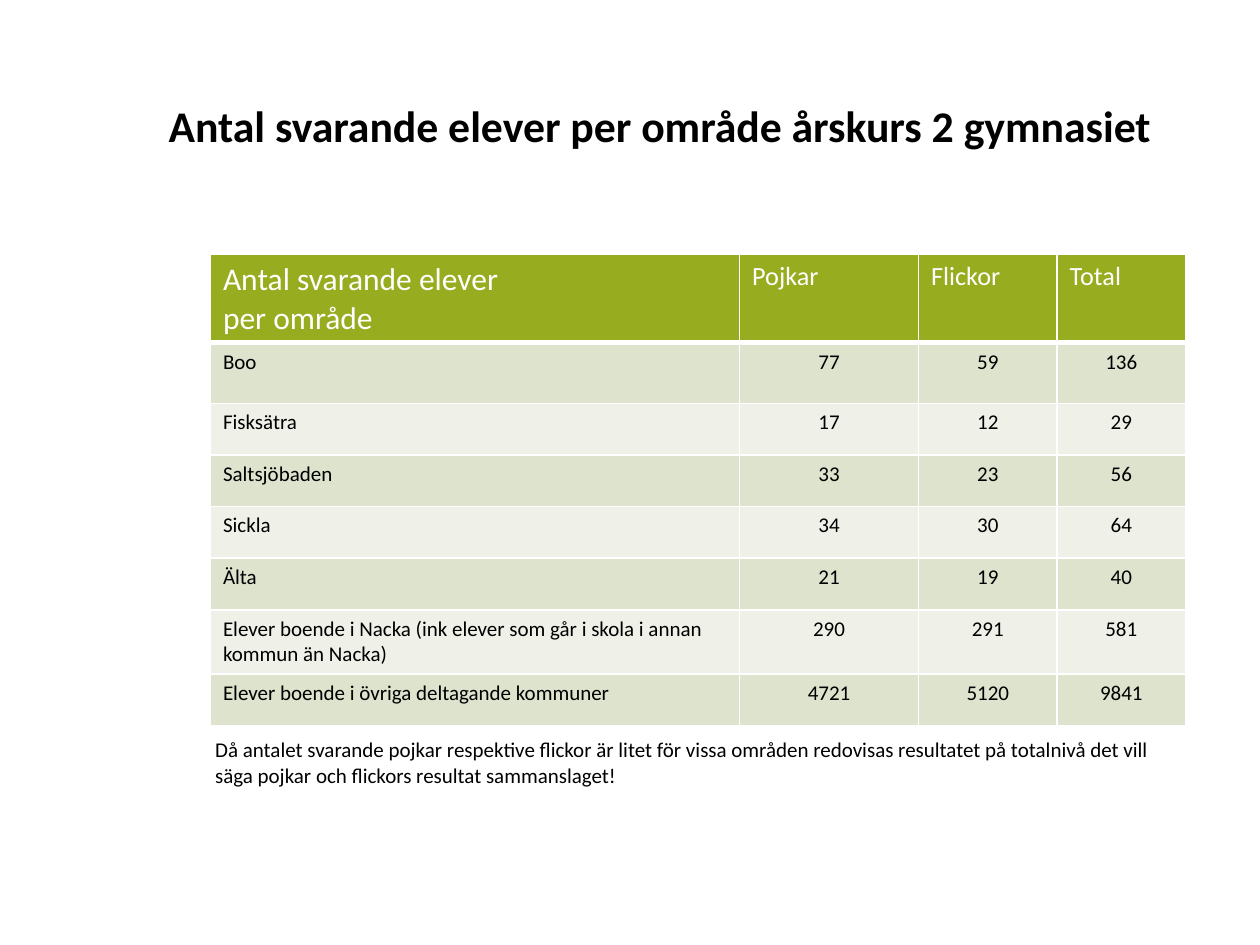
from dataclasses import dataclass
from lxml.etree import SubElement as Sub
from pptx import Presentation
from pptx.dml.color import RGBColor as RGB
from pptx.enum.text import MSO_ANCHOR as Anchor, PP_ALIGN as Align
from pptx.oxml.ns import qn
from pptx.util import Inches, Pt


@dataclass(frozen=True)
class Theme:
    font: str = "Calibri"
    ink: str = "000000"
    white: str = "FFFFFF"
    green: str = "97AC1E"
    bands: tuple = ("DDE3CD", "EFF1E8")
    title: int = 25
    lead: int = 18
    head: int = 15
    body: int = 12


LOOK = Theme()

HEADS = ("Antal svarande elever\vper område", "Pojkar", "Flickor", "Total")
ROWS = (
    ("Boo", 77, 59, 136),
    ("Fisksätra", 17, 12, 29),
    ("Saltsjöbaden", 33, 23, 56),
    ("Sickla", 34, 30, 64),
    ("Älta", 21, 19, 40),
    ("Elever boende i Nacka (ink elever som går i skola i annan kommun än Nacka)",
     290, 291, 581),
    ("Elever boende i övriga deltagande kommuner", 4721, 5120, 9841),
)
WIDTHS = (4.2, 1.42, 1.1, 1.02)
HEIGHTS = (0.7, 0.48, 0.41, 0.41, 0.41, 0.41, 0.51, 0.41)
NOTE = ("Då antalet svarande pojkar respektive flickor är litet för vissa områden "
        "redovisas resultatet på totalnivå det vill säga pojkar och flickors "
        "resultat sammanslaget!")


def write(frame, text, size, color, bold=False, align=Align.LEFT):
    para = frame.paragraphs[0]
    para.text = text
    para.alignment = align
    for run in para.runs:
        style = {"name": LOOK.font, "size": Pt(size), "bold": bold}
        for key, value in style.items():
            setattr(run.font, key, value)
        run.font.color.rgb = RGB.from_string(color)
    return para


def add_text(slide, box, text, size, bold=False, anchor=Anchor.TOP):
    frame = slide.shapes.add_textbox(*map(Inches, box)).text_frame
    frame.word_wrap = True
    frame.vertical_anchor = anchor
    return write(frame, text, size, LOOK.ink, bold)


def edge(cell, widths):
    # Borders come before the fill in the cell properties
    props = cell._tc.get_or_add_tcPr()
    for side, width in widths.items():
        line = Sub(props, qn(f"a:ln{side}"), w=str(Pt(width)))
        fill = Sub(line, qn("a:solidFill"))
        Sub(fill, qn("a:srgbClr"), val=LOOK.white)


def add_cell(cell, text, fill, size, color, align, base):
    edge(cell, {"L": 1, "R": 1, "T": 1, "B": base})
    cell.fill.solid()
    cell.fill.fore_color.rgb = RGB.from_string(fill)
    write(cell.text_frame, text, size, color, align=align)


def add_grid(slide):
    box = (1.67, 2.02, sum(WIDTHS), sum(HEIGHTS))
    table = slide.shapes.add_table(
        len(HEIGHTS), len(WIDTHS), *map(Inches, box)).table
    for col, width in zip(table.columns, WIDTHS):
        col.width = Inches(width)
    for row, height in zip(table.rows, HEIGHTS):
        row.height = Inches(height)

    # Header row
    for c, text in enumerate(HEADS):
        size = LOOK.head if c else LOOK.lead
        add_cell(table.cell(0, c), text, LOOK.green, size,
                 LOOK.white, Align.LEFT, 3)

    # Banded rows, one per area
    for r, row in enumerate(ROWS):
        for c, value in enumerate(row):
            add_cell(table.cell(r + 1, c), str(value), LOOK.bands[r % 2],
                     LOOK.body, LOOK.ink,
                     Align.CENTER if c else Align.LEFT, 1)


def main():
    deck = Presentation()
    deck.slide_width, deck.slide_height = Inches(10), Inches(7.5)
    slide = deck.slides.add_slide(deck.slide_layouts[6])

    # Title
    title = add_text(slide, (1.24, 0.3, 8.49, 1.25),
                     "Antal svarande elever per område årskurs 2 gymnasiet",
                     LOOK.title, bold=True, anchor=Anchor.MIDDLE)
    title.line_spacing = Pt(40)

    # Table and the note below it
    add_grid(slide)
    add_text(slide, (1.61, 5.8, 7.76, 0.51), NOTE, LOOK.body)
    deck.save("out.pptx")


if __name__ == "__main__":
    main()
